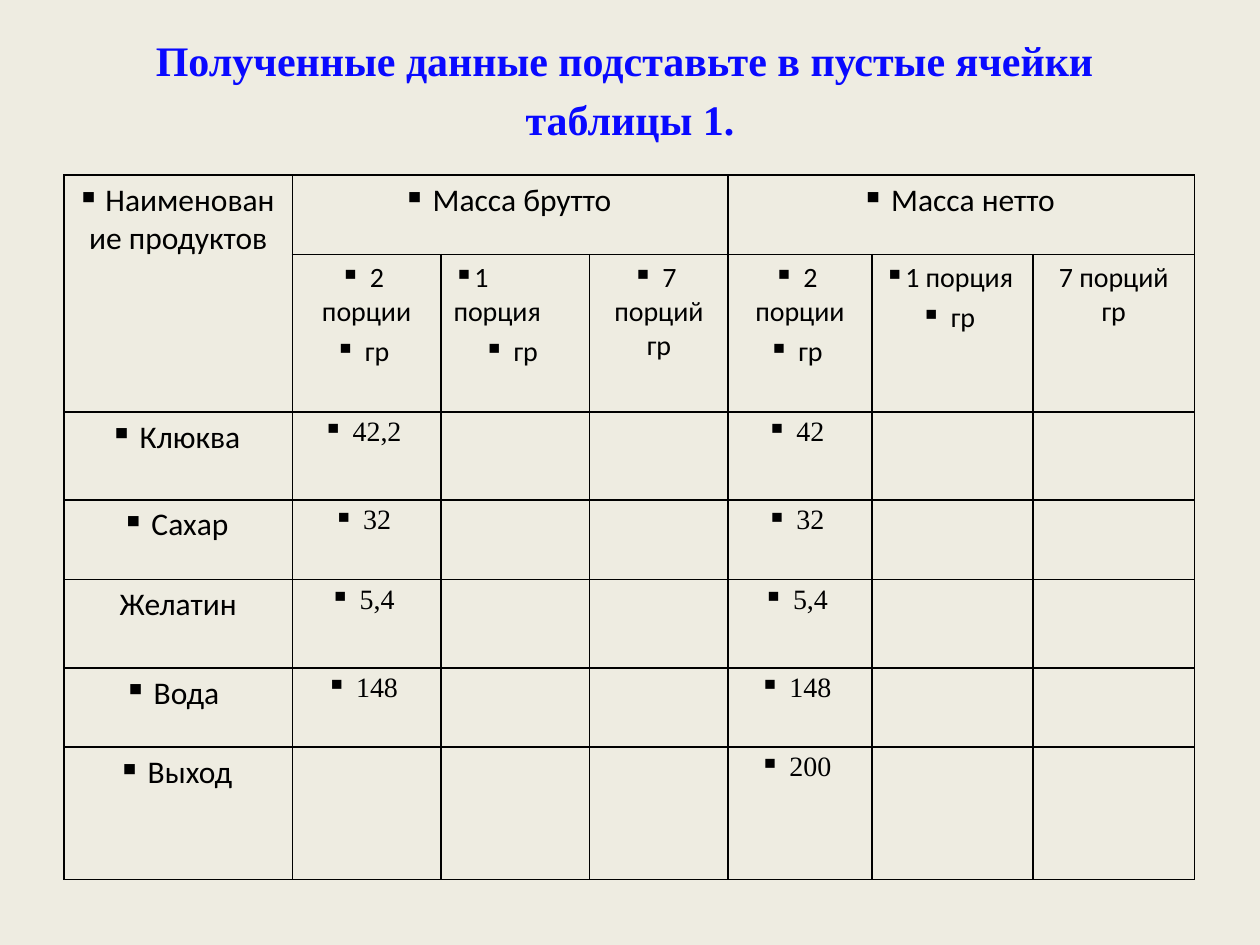
from lxml import etree
from pptx import Presentation
from pptx.dml.color import RGBColor
from pptx.enum.text import MSO_ANCHOR, MSO_AUTO_SIZE, PP_ALIGN
from pptx.oxml.ns import qn
from pptx.util import Inches, Pt

BACKGROUND = RGBColor(0xEE, 0xEC, 0xE1)
TITLE_BLUE = RGBColor(0x09, 0x09, 0xFF)
BLACK = RGBColor(0, 0, 0)
LEFT, CENTER = PP_ALIGN.LEFT, PP_ALIGN.CENTER
TOP, MIDDLE = MSO_ANCHOR.TOP, MSO_ANCHOR.MIDDLE
FIT_SHAPE = MSO_AUTO_SIZE.SHAPE_TO_FIT_TEXT

COLUMN_WIDTHS = [1.81, 1.18, 1.18, 1.1, 1.14, 1.28, 1.28]
ROW_HEIGHTS = [0.63, 1.25, 0.7, 0.63, 0.7, 0.63, 1.05]

HEADING = {"name": "Calibri", "size": Pt(18), "bold": False}
PORTION = {"name": "Calibri", "size": Pt(16), "bold": False}
NUMBER = {"name": "Times New Roman", "size": Pt(16), "bold": False}
TITLE = {"name": "Times New Roman", "size": Pt(24), "bold": True}


def write_lines(text_frame, lines, font_values, color, bullet=False):
    for index, line in enumerate(lines):
        paragraph = text_frame.paragraphs[0] if index == 0 else text_frame.add_paragraph()
        paragraph.alignment = CENTER
        paragraph.space_before = Pt(font_values["size"].pt * 0.2)
        run = paragraph.add_run()
        run.text = line
        for attribute, value in font_values.items():
            setattr(run.font, attribute, value)
        run.font.color.rgb = color
        if bullet:
            properties = paragraph._p.get_or_add_pPr()
            etree.SubElement(properties, qn("a:buChar")).set("char", "▪")


def add_borders(cell):
    properties = cell._tc.get_or_add_tcPr()
    for position, side in enumerate(("a:lnL", "a:lnR", "a:lnT", "a:lnB")):
        line = etree.Element(qn(side), w=str(Pt(1)))
        fill = etree.SubElement(line, qn("a:solidFill"))
        etree.SubElement(fill, qn("a:srgbClr"), val=str(BLACK))
        properties.insert(position, line)


presentation = Presentation()
presentation.slide_width = Inches(10)
presentation.slide_height = Inches(7.5)
slide = presentation.slides.add_slide(presentation.slide_layouts[5])
slide.background.fill.solid()
slide.background.fill.fore_color.rgb = BACKGROUND

# Title
title = slide.shapes.title
title.left, title.top = Inches(0.51), Inches(0.21)
title.width, title.height = Inches(8.98), Inches(0.99)
title.text_frame.word_wrap = True
title.text_frame.auto_size = FIT_SHAPE
title.text_frame.vertical_anchor = MIDDLE
write_lines(title.text_frame,
            ["Полученные данные подставьте в пустые ячейки ", "таблицы 1."],
            TITLE, TITLE_BLUE)

# Table grid
table = slide.shapes.add_table(
    len(ROW_HEIGHTS), len(COLUMN_WIDTHS), Inches(0.51), Inches(1.39),
    Inches(sum(COLUMN_WIDTHS)), Inches(sum(ROW_HEIGHTS))).table
table.first_row = False
table.horz_banding = False
for column, width in zip(table.columns, COLUMN_WIDTHS):
    column.width = Inches(width)
for row, height in zip(table.rows, ROW_HEIGHTS):
    row.height = Inches(height)
for cell in table.iter_cells():
    cell.fill.background()
    cell.vertical_anchor = TOP
    add_borders(cell)

# Merged headings
table.cell(0, 0).merge(table.cell(1, 0))
table.cell(0, 1).merge(table.cell(0, 3))
table.cell(0, 4).merge(table.cell(0, 6))
for column, heading in ((0, "Наименование продуктов"), (1, "Масса брутто"), (4, "Масса нетто")):
    write_lines(table.cell(0, column).text_frame, [heading], HEADING, BLACK, bullet=True)

# Portion headings, the same under both masses
portions = [["2 порции", "гр"], ["1 порция", "гр"], ["7 порций гр"]] * 2
for column, lines in enumerate(portions, start=1):
    text_frame = table.cell(1, column).text_frame
    write_lines(text_frame, lines, PORTION, BLACK, bullet=column < 6)
    if lines[0] == "1 порция":
        text_frame.paragraphs[0].alignment = LEFT
table.cell(1, 6).text_frame.paragraphs[0].space_before = Pt(0)

# Products with gross and net mass for two portions
products = [
    ("Клюква", "42,2", "42"),
    ("Сахар", "32", "32"),
    ("Желатин", "5,4", "5,4"),
    ("Вода ", "148", "148"),
    ("Выход", "", "200"),
]
for row, (product, gross, net) in enumerate(products, start=2):
    name_cell = table.cell(row, 0)
    has_bullet = product != "Желатин"
    write_lines(name_cell.text_frame, [product], HEADING, BLACK, bullet=has_bullet)
    if not has_bullet:
        name_cell.text_frame.paragraphs[0].space_before = Pt(0)
    compact_cells = [name_cell] if product == "Сахар" else []
    for column, mass in ((1, gross), (4, net)):
        if mass:
            cell = table.cell(row, column)
            write_lines(cell.text_frame, [mass], NUMBER, BLACK, bullet=True)
            compact_cells.append(cell)
    for cell in compact_cells:
        cell.margin_left = cell.margin_right = Inches(0.07)
        cell.margin_top = cell.margin_bottom = Inches(0)
        cell.text_frame.paragraphs[0].line_spacing = 1.15

presentation.save("out.pptx")
